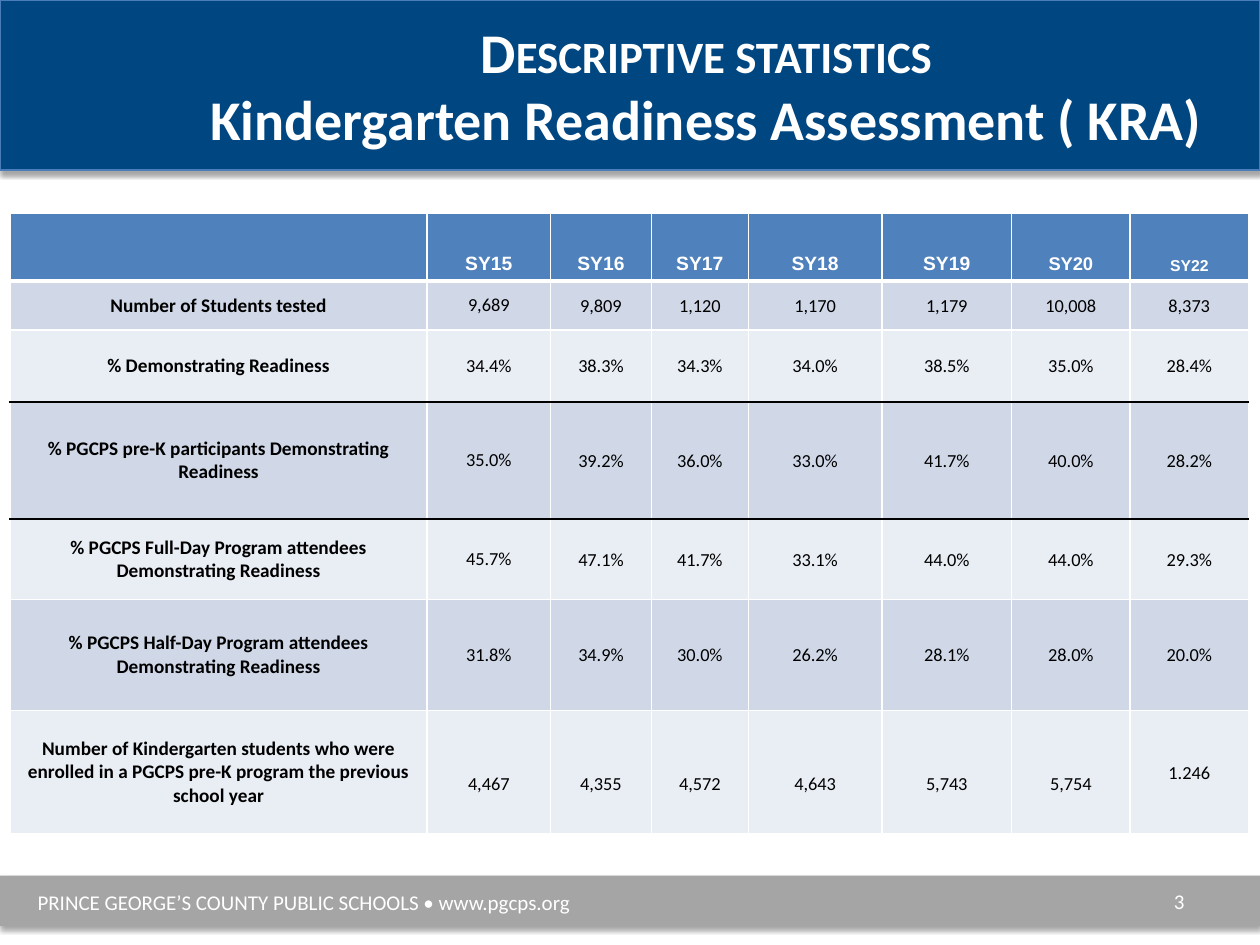
from dataclasses import dataclass

from lxml.etree import SubElement
from pptx import Presentation
from pptx.dml.color import RGBColor
from pptx.enum.shapes import MSO_SHAPE
from pptx.enum.text import MSO_ANCHOR, MSO_AUTO_SIZE, PP_ALIGN
from pptx.oxml.ns import qn
from pptx.util import Inches, Pt


@dataclass(frozen=True)
class Theme:
    navy: str = "004681"
    navy_edge: str = "4A7DBA"
    grey: str = "A5A5A5"
    header: str = "4F81BD"
    bands: tuple = ("D0D8E8", "E9EDF4")
    white: str = "FFFFFF"
    black: str = "000000"
    font: str = "Calibri"
    header_font: str = "Arial"
    title_size: float = 32
    footer_size: float = 12
    label_size: float = 11
    value_size: float = 10.5
    header_sizes: tuple = (11, 11, 11, 11, 11, 11, 10.5, 9)


THEME = Theme()

COLUMN_WIDTHS = (3.31, 0.98, 0.8, 0.77, 1.06, 1.03, 0.94, 0.94)
ROW_HEIGHTS = (0.54, 0.39, 0.57, 0.93, 0.64, 0.88, 0.98)
BLACK_RULES_BELOW = (2, 3)
READINESS = (
    ("", "SY15", "SY16", "SY17", "SY18", "SY19", "SY20", "SY22"),
    ("Number of Students tested",
     "9,689", "9,809", "1,120", "1,170", "1,179", "10,008", "8,373"),
    ("% Demonstrating Readiness",
     "34.4%", "38.3%", "34.3%", "34.0%", "38.5%", "35.0%", "28.4%"),
    ("% PGCPS pre-K participants Demonstrating Readiness",
     "35.0%", "39.2%", "36.0%", "33.0%", "41.7%", "40.0%", "28.2%"),
    ("% PGCPS Full-Day Program attendees Demonstrating Readiness",
     "45.7%", "47.1%", "41.7%", "33.1%", "44.0%", "44.0%", "29.3%"),
    ("% PGCPS Half-Day Program attendees Demonstrating Readiness",
     "31.8%", "34.9%", "30.0%", "26.2%", "28.1%", "28.0%", "20.0%"),
    ("Number of Kindergarten students who were enrolled in a PGCPS pre-K "
     "program the previous school year",
     "4,467", "4,355", "4,572", "4,643", "5,743", "5,754", "1.246"),
)


def color(value):
    return RGBColor.from_string(value)


def style_text(frame, size, fill, align, bold=False, font=THEME.font):
    for para in frame.paragraphs:
        para.alignment = align
        for span in para.runs:
            span.font.size = Pt(size)
            span.font.name = font
            span.font.bold = bold
            span.font.color.rgb = color(fill)


def add_shadow(shape):
    effects = SubElement(shape._element.spPr, qn("a:effectLst"))
    shadow = SubElement(effects, qn("a:outerShdw"), blurRad=str(Pt(3.1)),
                        dist=str(Pt(1.8)), dir="5400000", rotWithShape="0")
    tint = SubElement(shadow, qn("a:srgbClr"), val=THEME.black)
    SubElement(tint, qn("a:alpha"), val="35000")


def add_bar(page, box, fill, edge=None):
    bar = page.shapes.add_shape(MSO_SHAPE.RECTANGLE, *map(Inches, box))
    bar.fill.solid()
    bar.fill.fore_color.rgb = color(fill)
    if edge:
        bar.line.color.rgb = color(edge)
        bar.line.width = Pt(0.75)
    else:
        bar.line.fill.background()
    add_shadow(bar)


def add_label(page, box, text, align, anchor):
    label = page.shapes.add_textbox(*map(Inches, box))
    frame = label.text_frame
    frame.word_wrap = True
    frame.vertical_anchor = anchor
    frame.text = text
    style_text(frame, THEME.footer_size, THEME.white, align)


def add_title_band(page, box):
    left, top, width, height = box
    add_bar(page, box, THEME.navy, THEME.navy_edge)
    title = page.shapes.title
    page.shapes._spTree.append(title._element)
    title.left, title.top = Inches(left + 1.5), Inches(top + 0.08)
    title.width, title.height = Inches(width - 1.79), Inches(height - 0.17)
    title.line.color.rgb = color(THEME.navy)
    title.line.width = Pt(0.75)
    frame = title.text_frame
    frame.text = "Descriptive statistics\nKindergarten Readiness Assessment ( KRA)"
    frame.auto_size = MSO_AUTO_SIZE.NONE
    frame.vertical_anchor = MSO_ANCHOR.MIDDLE
    style_text(frame, THEME.title_size, THEME.white, PP_ALIGN.CENTER, bold=True)
    first_span = frame.paragraphs[0].runs[0]
    first_span._r.get_or_add_rPr().set("cap", "small")


def add_footer(page, box):
    left, top, width, height = box
    add_bar(page, box, THEME.grey)
    add_label(page, (left + 0.2, top + 0.06, 6.84, 0.3),
              "PRINCE GEORGE’S COUNTY PUBLIC SCHOOLS • www.pgcps.org",
              PP_ALIGN.LEFT, MSO_ANCHOR.TOP)
    add_label(page, (left + width - 2.83, top, 2.33, height), "3",
              PP_ALIGN.RIGHT, MSO_ANCHOR.MIDDLE)


def set_borders(cell, row):
    top = THEME.black if row - 1 in BLACK_RULES_BELOW else THEME.white
    bottom = THEME.black if row in BLACK_RULES_BELOW else THEME.white
    edges = {
        "lnL": (THEME.white, 1),
        "lnR": (THEME.white, 1),
        "lnT": (top, 3 if row == 1 else 1),
        "lnB": (bottom, 3 if row == 0 else 1),
    }
    properties = cell._tc.get_or_add_tcPr()
    for tag, (stroke, width) in edges.items():
        line = SubElement(properties, qn(f"a:{tag}"), w=str(Pt(width)))
        fill = SubElement(line, qn("a:solidFill"))
        SubElement(fill, qn("a:srgbClr"), val=stroke)


def fill_cell(cell, row, column, text):
    is_header, is_label = row == 0, column == 0
    set_borders(cell, row)
    cell.fill.solid()
    cell.fill.fore_color.rgb = color(
        THEME.header if is_header else THEME.bands[(row - 1) % 2])
    cell.vertical_anchor = MSO_ANCHOR.BOTTOM if is_header else MSO_ANCHOR.MIDDLE
    if not is_header and column > 1:
        cell.margin_left = cell.margin_right = cell.margin_top = Inches(0.01)
        cell.margin_bottom = 0
    is_last_row = row == len(READINESS) - 1
    if is_last_row and 0 < column < len(COLUMN_WIDTHS) - 1:
        cell.margin_top = cell.margin_bottom + Inches(0.19)
    cell.text_frame.text = text
    if is_header:
        style_text(cell.text_frame, THEME.header_sizes[column], THEME.white,
                   PP_ALIGN.CENTER, True, THEME.header_font)
    else:
        size = THEME.label_size if is_label else THEME.value_size
        style_text(cell.text_frame, size, THEME.black, PP_ALIGN.CENTER, is_label)


def add_readiness_table(page, box):
    table = page.shapes.add_table(
        len(ROW_HEIGHTS), len(COLUMN_WIDTHS), *map(Inches, box)).table
    for column, width in zip(table.columns, COLUMN_WIDTHS):
        column.width = Inches(width)
    for row, height in zip(table.rows, ROW_HEIGHTS):
        row.height = Inches(height)
    for row, texts in enumerate(READINESS):
        for column, text in enumerate(texts):
            fill_cell(table.cell(row, column), row, column, text)


def main():
    deck = Presentation()
    deck.slide_width, deck.slide_height = Inches(10), Inches(7.5)
    page = deck.slides.add_slide(deck.slide_layouts[5])
    add_footer(page, (0, 6.95, 10, 0.4))
    add_title_band(page, (0, 0, 10, 1.35))
    add_readiness_table(page, (0.08, 1.69, 9.82, 4.93))
    deck.save("out.pptx")


if __name__ == "__main__":
    main()
